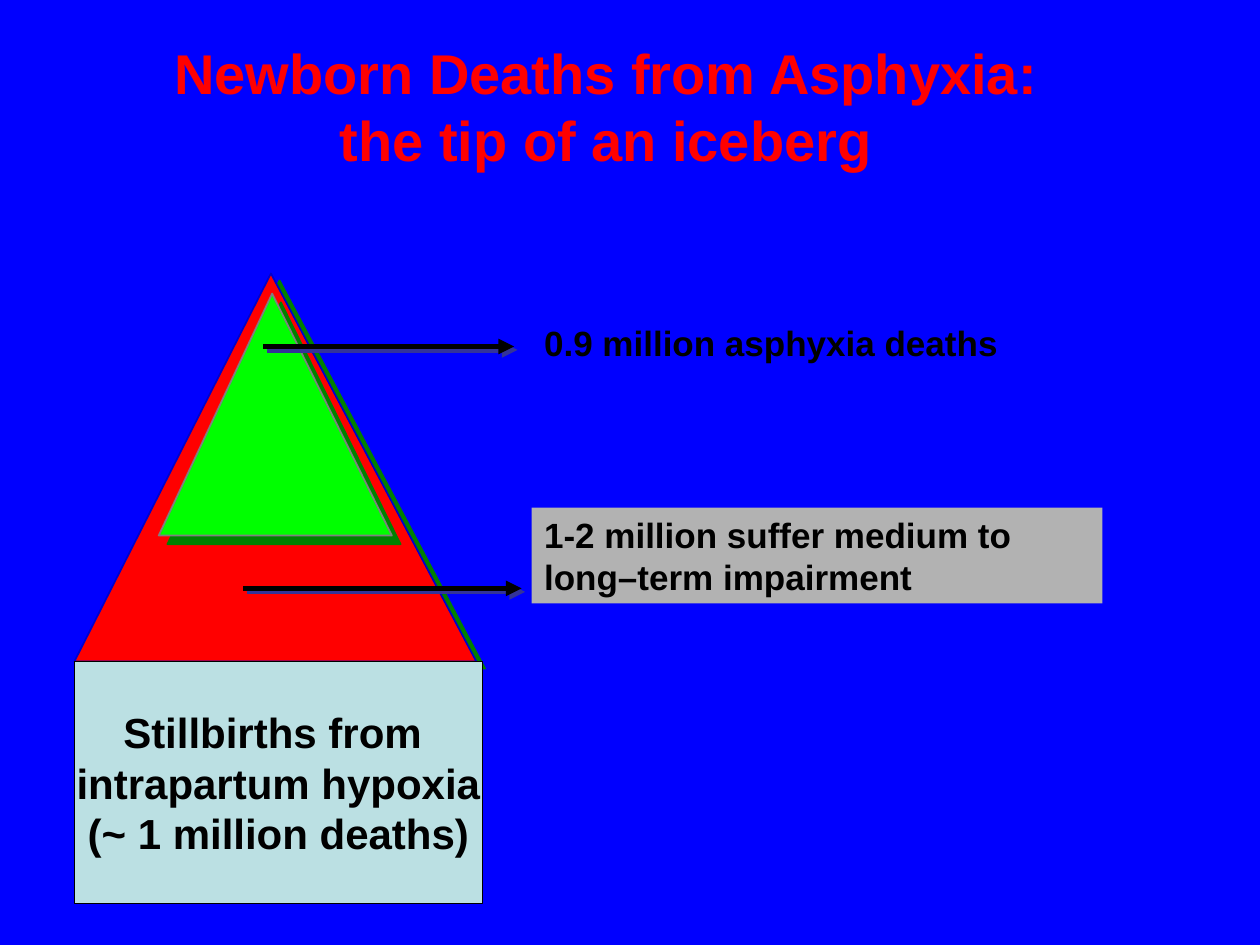
from copy import deepcopy

from lxml import etree
from pptx import Presentation
from pptx.dml.color import RGBColor
from pptx.enum.shapes import MSO_CONNECTOR, MSO_SHAPE
from pptx.enum.text import MSO_ANCHOR, MSO_AUTO_SIZE, PP_ALIGN
from pptx.oxml.ns import qn
from pptx.util import Inches, Pt

STRAIGHT = MSO_CONNECTOR.STRAIGHT
RECTANGLE = MSO_SHAPE.RECTANGLE
TOP, MIDDLE = MSO_ANCHOR.TOP, MSO_ANCHOR.MIDDLE
FIXED, GROW = MSO_AUTO_SIZE.NONE, MSO_AUTO_SIZE.SHAPE_TO_FIT_TEXT
LEFT, CENTER = PP_ALIGN.LEFT, PP_ALIGN.CENTER

BLUE = RGBColor(0x00, 0x00, 0xFF)
RED = RGBColor(0xFF, 0x00, 0x00)
GREEN = RGBColor(0x00, 0xFF, 0x00)
DARK_GREEN = RGBColor(0x00, 0x80, 0x00)
NAVY = RGBColor(0x00, 0x00, 0xCC)
INDIGO = RGBColor(0x33, 0x33, 0x99)
GRAY = RGBColor(0x80, 0x80, 0x80)
SILVER = RGBColor(0xB2, 0xB2, 0xB2)
PALE_TEAL = RGBColor(0xBB, 0xE0, 0xE3)
BLACK = RGBColor(0x00, 0x00, 0x00)


def write_text(shape, paragraphs, size, color=BLACK, align=LEFT, anchor=TOP,
               wrap=True, auto_size=FIXED):
    """Fill a shape with bold Arial paragraphs."""
    frame = shape.text_frame
    frame.word_wrap = wrap
    frame.auto_size = auto_size
    frame.vertical_anchor = anchor
    frame.margin_left = frame.margin_right = Inches(0.1)
    frame.margin_top = frame.margin_bottom = Inches(0.05)
    for index, text in enumerate(paragraphs):
        para = frame.add_paragraph() if index else frame.paragraphs[0]
        para.text = text
        para.alignment = align
        for span in para.runs:
            font = span.font
            font.name, font.size, font.bold = "Arial", Pt(size), True
            font.color.rgb = color
        for line_break in para._p.findall(qn("a:br")):
            line_break.insert(0, deepcopy(para.runs[0]._r.rPr))


def add_shadow(shape, color, distance, angle):
    """Give a shape a hard offset shadow."""
    effects = etree.SubElement(shape._element.spPr, qn("a:effectLst"))
    shadow = etree.SubElement(effects, qn("a:outerShdw"), blurRad="0",
                              dist=str(Pt(distance)), dir=str(angle * 60000),
                              algn="ctr", rotWithShape="0")
    etree.SubElement(shadow, qn("a:srgbClr"), val=str(color))


def add_triangle(page, corners, fill, outline, distance, angle):
    """Draw a filled triangle through three corners."""
    points = [(Inches(x), Inches(y)) for x, y in corners]
    builder = page.shapes.build_freeform(*points[0], scale=1.0)
    builder.add_line_segments(points[1:], close=True)
    triangle = builder.convert_to_shape()
    triangle.fill.solid()
    triangle.fill.fore_color.rgb = fill
    triangle.line.color.rgb = outline
    triangle.line.width = Pt(1)
    add_shadow(triangle, DARK_GREEN, distance, angle)


def add_arrow(page, start, end, y):
    """Draw a horizontal arrow pointing right."""
    arrow = page.shapes.add_connector(STRAIGHT, Inches(start), Inches(y),
                                      Inches(end), Inches(y))
    arrow.line.color.rgb = BLACK
    arrow.line.width = Pt(3)
    etree.SubElement(arrow.line._get_or_add_ln(), qn("a:tailEnd"), type="triangle")
    add_shadow(arrow, INDIGO, 2.8, 45)


def add_box(page, left, top, width, height, fill, outline=None):
    """Draw a flat rectangle."""
    box = page.shapes.add_shape(RECTANGLE, Inches(left), Inches(top),
                                Inches(width), Inches(height))
    box.fill.solid()
    box.fill.fore_color.rgb = fill
    if outline is None:
        box.line.fill.background()
    else:
        box.line.color.rgb = outline
        box.line.width = Pt(0.75)
    box.shadow.inherit = False
    return box


def add_title(page, text):
    """Place and format the title."""
    title = page.shapes.title
    title.left, title.top = Inches(0.96), Inches(0.25)
    title.width, title.height = Inches(7.7), Inches(1.17)
    write_text(title, [text], 32, color=RED, align=CENTER, anchor=MIDDLE)


def main():
    """Build the iceberg slide."""
    deck = Presentation()
    deck.slide_width, deck.slide_height = Inches(10), Inches(7.5)
    page = deck.slides.add_slide(deck.slide_layouts[5])
    page.background.fill.solid()
    page.background.fill.fore_color.rgb = BLUE
    add_title(page, "Newborn Deaths from Asphyxia:\nthe tip of an iceberg")

    deaths = page.shapes.add_textbox(Inches(4.22), Inches(2.5),
                                     Inches(3.86), Inches(0.43))
    write_text(deaths, ["0.9 million asphyxia deaths"], 20, auto_size=GROW)

    add_triangle(page, [(2.15, 2.17), (3.78, 5.25), (0.59, 5.25)],
                 RED, NAVY, 6.4, 39)
    add_triangle(page, [(2.16, 2.33), (3.11, 4.25), (1.26, 4.25)],
                 GREEN, GRAY, 7.1, 45)
    add_arrow(page, 2.09, 4.08, 2.75)
    add_arrow(page, 1.93, 4.14, 4.67)

    impairment = add_box(page, 4.22, 4.03, 4.53, 0.76, SILVER)
    write_text(impairment, ["1-2 million suffer medium to long–term impairment"],
               20, auto_size=GROW)
    stillbirths = add_box(page, 0.59, 5.25, 3.24, 1.92, PALE_TEAL, BLACK)
    write_text(stillbirths, ["Stillbirths from ", "intrapartum hypoxia",
                             "(~ 1 million deaths)"],
               24, align=CENTER, anchor=MIDDLE, wrap=False)
    deck.save("out.pptx")


if __name__ == "__main__":
    main()
